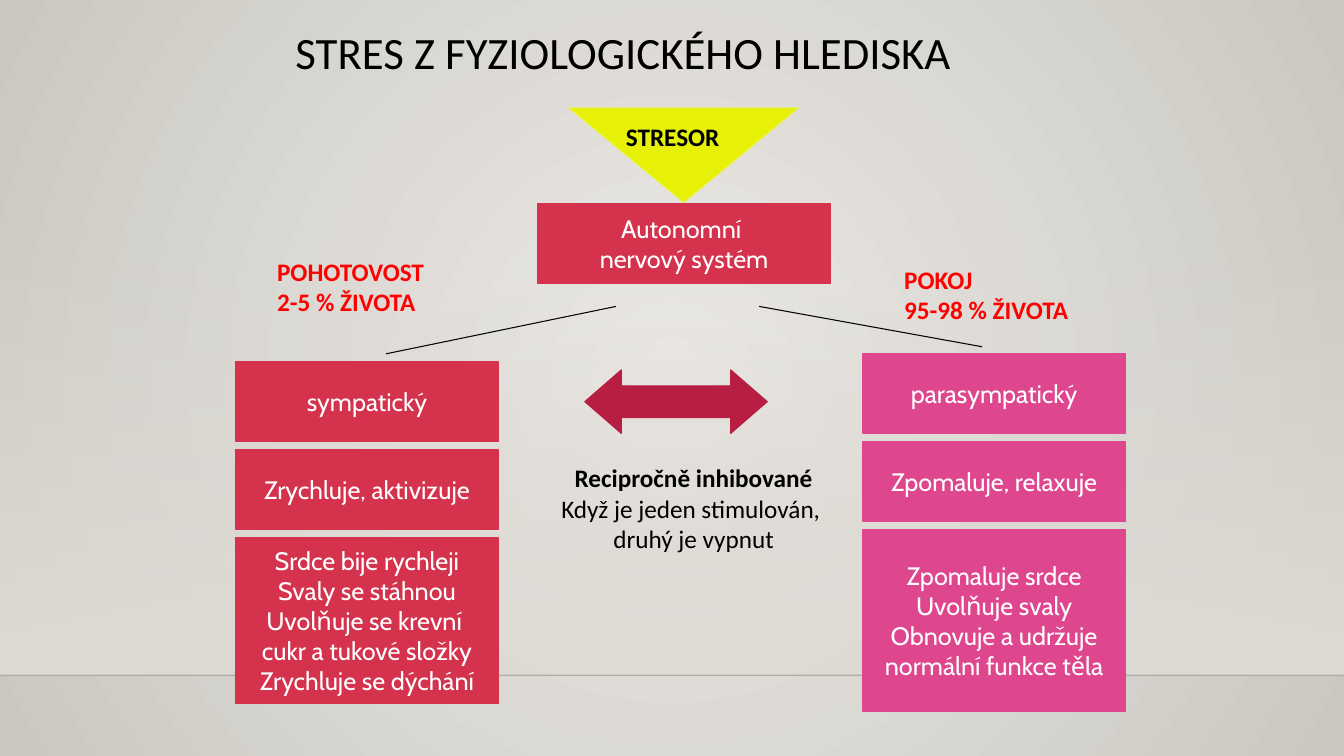
from dataclasses import dataclass

from lxml.etree import SubElement
from pptx import Presentation
from pptx.dml.color import RGBColor
from pptx.enum.shapes import MSO_CONNECTOR as Link, MSO_SHAPE as Kind
from pptx.enum.text import MSO_ANCHOR as Anchor, PP_ALIGN as Align
from pptx.oxml.ns import qn
from pptx.util import Pt

PX = 9144  # 100 px to the inch
WIDE, HIGH = 1333, 750
FLOOR = 670
RED, PINK, CRIMSON, YELLOW = "D4324D", "DE478E", "B71E42", "E6F107"
BLACK, WHITE, ALERT, SAND = "000000", "FFFFFF", "FF0000", "DFDBD5"
ROW, STEP = 79, 87


@dataclass
class Area:
    x: int
    y: int
    w: int
    h: int

    def emu(self) -> list[int]:
        return [v * PX for v in (self.x, self.y, self.w, self.h)]


@dataclass
class Branch:
    x: int
    y: int
    color: str
    last: int
    texts: list[str]


@dataclass
class Label:
    area: Area
    text: str
    color: str
    align: Align = Align.LEFT
    bold: int = 2  # number of bold lines


@dataclass
class Stroke:
    x1: int
    y1: int
    x2: int
    y2: int
    width: float = 0.75


BRANCHES = [
    Branch(234, 359, RED, 165, [
        "sympatický",
        "Zrychluje, aktivizuje",
        "Srdce bije rychleji\nSvaly se stáhnou\nUvolňuje se krevní \n"
        "cukr a tukové složky\nZrychluje se dýchání"]),
    Branch(856, 351, PINK, 181, [
        "parasympatický",
        "Zpomaluje, relaxuje",
        "Zpomaluje srdce\nUvolňuje svaly\nObnovuje a udržuje\n"
        "normální funkce těla"]),
]
LABELS = [
    Label(Area(545, 454, 286, 101),
          "Recipročně inhibované\nKdyž je jeden stimulován, \ndruhý je vypnut",
          BLACK, Align.CENTER, 1),
    Label(Area(611, 115, 141, 40), "STRESOR", BLACK),
    Label(Area(265, 249, 209, 71), "POHOTOVOST\n2-5 % ŽIVOTA", ALERT),
    Label(Area(887, 257, 214, 71), "POKOJ\n95-98 % ŽIVOTA", ALERT),
]
STROKES = [Stroke(611, 304, 383, 351), Stroke(753, 304, 974, 344)]


def rgb(code: str) -> RGBColor:
    return RGBColor.from_string(code)


def fade(node, percent: int) -> None:
    """Make a colour element partly transparent."""
    SubElement(node, qn("a:alpha"), val=str(percent * 1000))


def blend(fill, *codes: str) -> None:
    fill.gradient()
    for stop, code in zip(fill.gradient_stops, codes):
        stop.color.rgb = rgb(code)


def write(frame, text: str, color: str, align: Align, name: str,
          size: int = 18, bold: int = 0) -> None:
    for i, line in enumerate(text.split("\n")):
        par = frame.paragraphs[0] if i == 0 else frame.add_paragraph()
        par.alignment = align
        run = par.add_run()
        run.text = line
        style = {"name": name, "size": Pt(size), "bold": i < bold}
        for key, value in style.items():
            setattr(run.font, key, value)
        run.font.color.rgb = rgb(color)


def block(slide, kind: Kind, area: Area, color: str, edge: str = ""):
    shape = slide.shapes.add_shape(kind, *area.emu())
    shape.shadow.inherit = False
    shape.fill.solid()
    shape.fill.fore_color.rgb = rgb(color)
    shape.line.color.rgb = rgb(edge or color)
    shape.line.width = Pt(0.75)
    return shape


def box(slide, area: Area, color: str, text: str) -> None:
    frame = block(slide, Kind.RECTANGLE, area, color).text_frame
    frame.word_wrap = False
    frame.vertical_anchor = Anchor.MIDDLE
    write(frame, text, WHITE, Align.CENTER, "Cabin")


def rule(slide, s: Stroke):
    ends = [v * PX for v in (s.x1, s.y1, s.x2, s.y2)]
    line = slide.shapes.add_connector(Link.STRAIGHT, *ends)
    line.line.color.rgb = rgb(BLACK)
    line.line.width = Pt(s.width)
    SubElement(line._element.spPr, qn("a:effectLst"))
    return line


def backdrop(slide) -> None:
    blend(slide.background.fill, "ECEAE7", "CAC7C1")
    grad = slide._element.find(".//" + qn("a:gradFill"))
    grad.remove(grad.find(qn("a:lin")))
    ring = SubElement(grad, qn("a:path"), path="circle")
    SubElement(ring, qn("a:fillToRect"),
               {side: "50000" for side in "ltrb"})

    wall = block(slide, Kind.RECTANGLE, Area(0, 221, WIDE, FLOOR - 221), SAND)
    wall.line.fill.background()
    blend(wall.fill, SAND, SAND)
    wall.fill.gradient_angle = 270
    fade(wall._element.find(".//" + qn("a:srgbClr")), 0)

    edge = rule(slide, Stroke(0, FLOOR, WIDE, FLOOR, 1))
    fade(edge._element.find(".//" + qn("a:srgbClr")), 20)


def heading(slide) -> None:
    title = slide.shapes.title
    spot = Area(283, 26, 1050, 115).emu()
    for key, value in zip(("left", "top", "width", "height"), spot):
        setattr(title, key, value)
    frame = title.text_frame
    frame.vertical_anchor = Anchor.TOP
    write(frame, "STRES Z FYZIOLOGICKÉHO HLEDISKA", BLACK, Align.LEFT,
          "Calibri", 32)
    frame.paragraphs[0].line_spacing = 0.9


def main() -> None:
    deck = Presentation()
    deck.slide_width, deck.slide_height = WIDE * PX, HIGH * PX
    slide = deck.slides.add_slide(deck.slide_layouts[5])
    backdrop(slide)
    heading(slide)

    box(slide, Area(533, 202, 291, ROW), RED, "Autonomní \nnervový systém")
    for stroke in STROKES:
        rule(slide, stroke)
    for side in BRANCHES:
        for i, text in enumerate(side.texts):
            tall = side.last if i == len(side.texts) - 1 else ROW
            box(slide, Area(side.x, side.y + i * STEP, 260, tall),
                side.color, text)

    arrow = block(slide, Kind.LEFT_RIGHT_ARROW, Area(580, 367, 181, 63),
                  CRIMSON)
    arrow.adjustments[0], arrow.adjustments[1] = 0.5, 0.575
    stressor = block(slide, Kind.ISOSCELES_TRIANGLE, Area(564, 107, 228, 94),
                     YELLOW, "EBF34B")
    stressor.rotation = 180

    for label in LABELS:
        frame = slide.shapes.add_textbox(*label.area.emu()).text_frame
        frame.word_wrap = True
        write(frame, label.text, label.color, label.align, "Calibri",
              bold=label.bold)
    deck.save("out.pptx")


if __name__ == "__main__":
    main()
